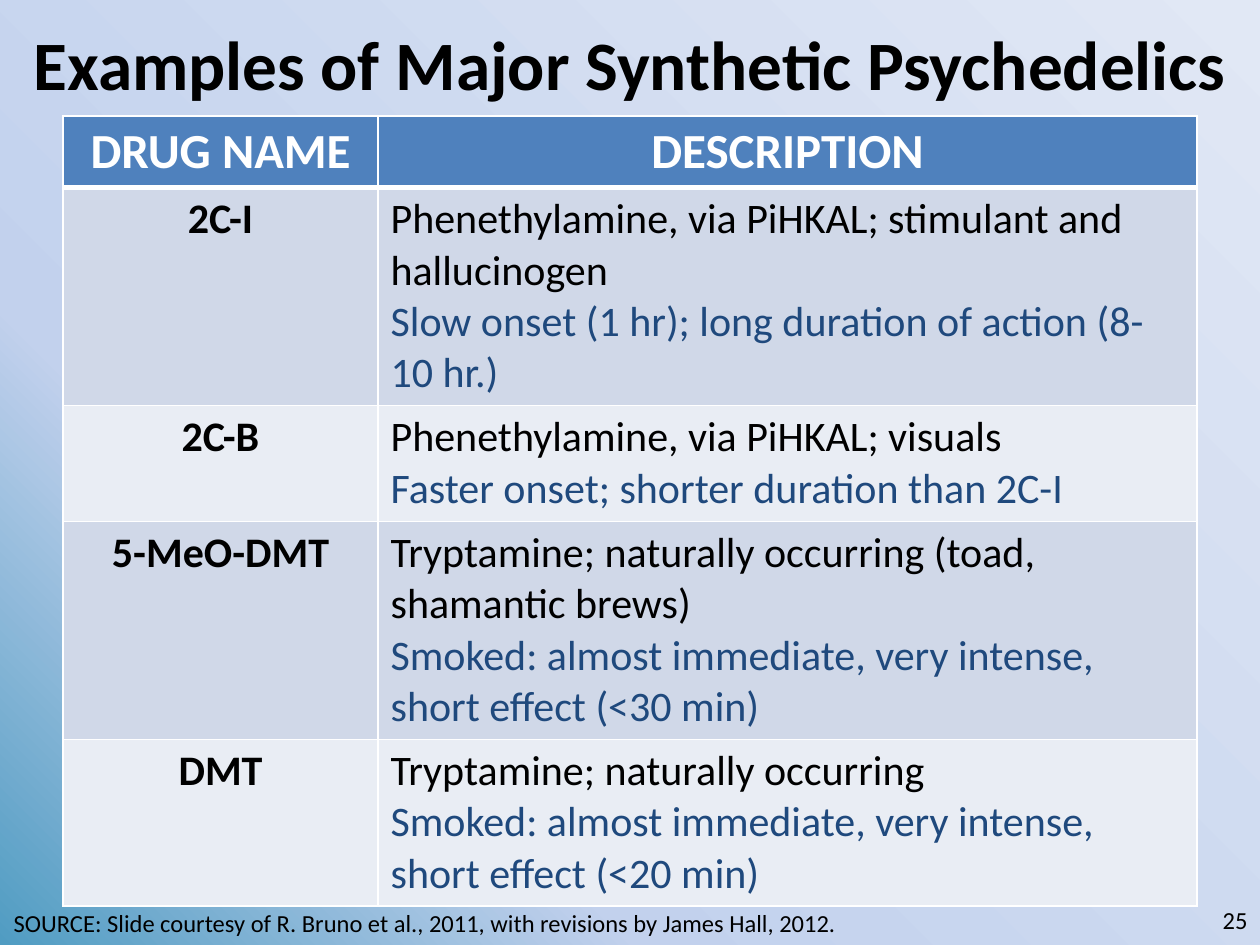
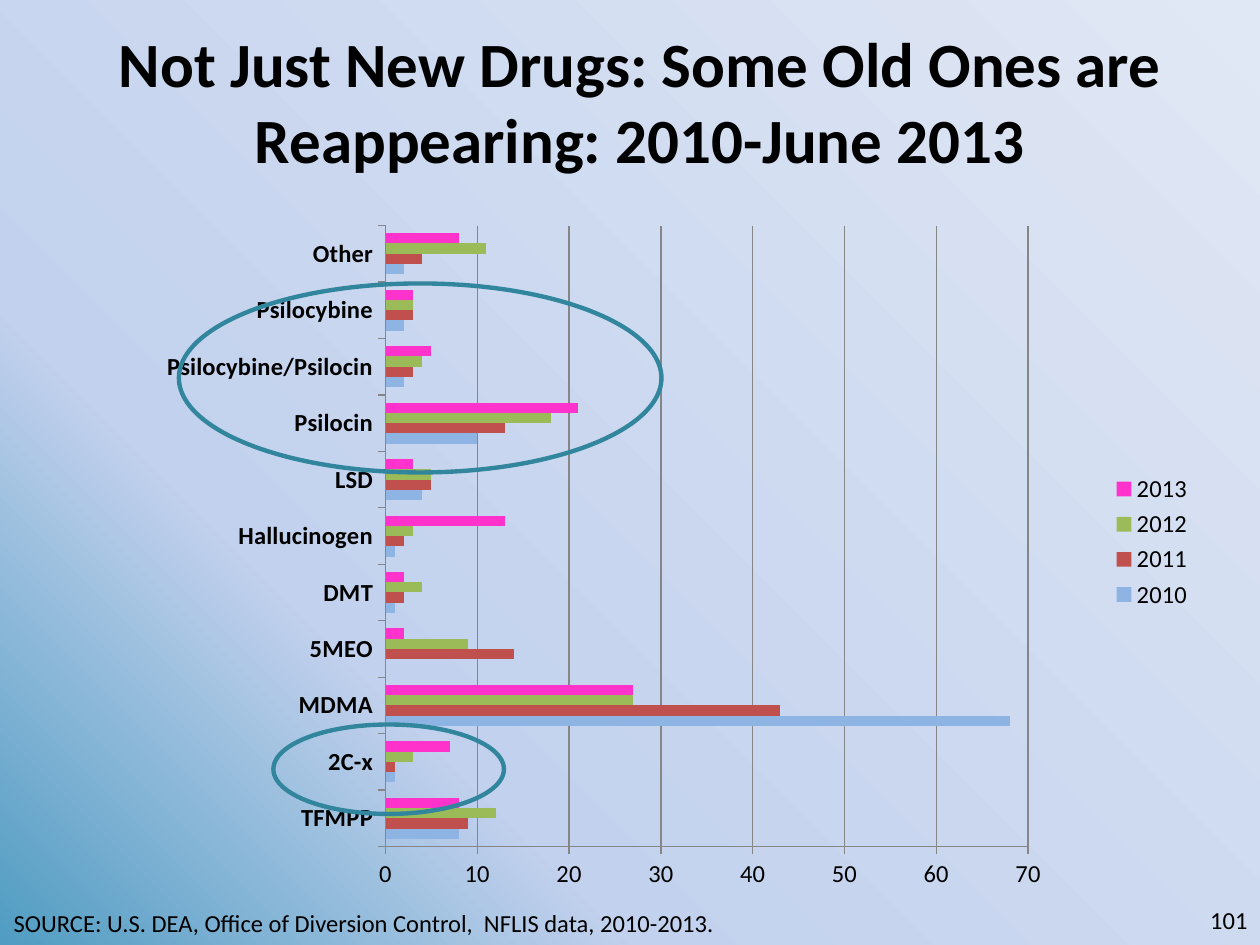
from dataclasses import dataclass

import lxml.etree
import pptx
import pptx.chart.data
import pptx.dml.color
import pptx.enum.chart
import pptx.enum.shapes
import pptx.enum.text
import pptx.oxml.ns
import pptx.util

Inches = pptx.util.Inches
Pt = pptx.util.Pt
qn = pptx.oxml.ns.qn
Align = pptx.enum.text.PP_ALIGN
Anchor = pptx.enum.text.MSO_ANCHOR

FONT = "Calibri"
COLORS = {
    "black": "000000",
    "white": "FFFFFF",
    "navy": "1F497D",
    "head": "4F81BD",
    "odd": "D0D8E8",
    "even": "E9EDF4",
    "ring": "31859C",
    "grid": "868686",
    "2010": "8EB4E3",
    "2011": "C0504D",
    "2012": "9BBB59",
    "2013": "FF33CC",
}
STOPS = [(0, "509CC2"), (29, "C2D1ED"), (100, "E1E8F5")]


@dataclass
class Box:
    left: float
    top: float
    width: float
    height: float

    def spread(self) -> tuple:
        return tuple(Inches(n) for n in (self.left, self.top, self.width, self.height))


@dataclass
class Drug:
    name: str
    kind: str
    effect: str
    height: float


@dataclass
class Count:
    year: str
    values: tuple


SOURCE = Box(0.01, 7.16, 7.5, 0.34)
NUMBER = Box(7.67, 7.1, 2.33, 0.4)
CHART = Box(0.93, 1.47, 8.64, 5.66)
PLOT = Box(2.13, 0.32, 5.1, 4.93)
RINGS = [Box(1.42, 2.25, 3.83, 1.5), Box(2.17, 5.75, 1.83, 0.71)]
DRUGS = [
    Drug("2C-I", "Phenethylamine, via PiHKAL; stimulant and hallucinogen",
         "Slow onset (1 hr); long duration of action (8-10 hr.)", 1.73),
    Drug("2C-B", "Phenethylamine, via PiHKAL; visuals",
         "Faster onset; shorter duration than 2C-I", 0.92),
    Drug("5-MeO-DMT", "Tryptamine; naturally occurring (toad, shamantic brews)",
         "Smoked: almost immediate, very intense, short effect (<30 min)", 1.73),
    Drug("DMT", "Tryptamine; naturally occurring",
         "Smoked: almost immediate, very intense, short effect (<20 min)", 1.32),
]
NAMES = ["TFMPP", "2C-x", "MDMA", "5MEO", "DMT", "Hallucinogen", "LSD", "Psilocin",
         "Psilocybine/Psilocin", "Psilocybine", "Other"]
COUNTS = [
    Count("2010", (8, 1, 68, 0, 1, 1, 4, 10, 2, 2, 2)),
    Count("2011", (9, 1, 43, 14, 2, 2, 5, 13, 3, 3, 4)),
    Count("2012", (12, 3, 27, 9, 4, 3, 5, 18, 4, 3, 11)),
    Count("2013", (8, 7, 27, 2, 2, 13, 3, 21, 5, 3, 8)),
]


def color(name: str):
    return pptx.dml.color.RGBColor.from_string(COLORS[name])


def style(font, size: float, bold: bool = False, tint: str = "black") -> None:
    font.name = FONT
    font.size = Pt(size)
    font.bold = bold
    font.color.rgb = color(tint)


def write(frame, text: str, size: float = 14, bold: bool = False, tint: str = "black",
          align=Align.LEFT, more: bool = False) -> None:
    line = frame.add_paragraph() if more else frame.paragraphs[0]
    line.alignment = align
    run = line.add_run()
    run.text = text
    style(run.font, size, bold, tint)


def add_text(slide, box: Box, text: str, anchor=Anchor.MIDDLE, **form) -> None:
    frame = slide.shapes.add_textbox(*box.spread()).text_frame
    frame.word_wrap = True
    frame.vertical_anchor = anchor
    write(frame, text, **form)


def add_child(parent, tag: str, **attrs):
    return lxml.etree.SubElement(parent, qn(tag), attrs)


def paint_back(master) -> None:
    master.background.fill.gradient()
    grad = master.element.find(".//" + qn("a:gradFill"))
    for child in list(grad):
        grad.remove(child)
    stops = add_child(grad, "a:gsLst")
    for place, tone in STOPS:
        stop = add_child(stops, "a:gs", pos=str(place * 1000))
        add_child(stop, "a:srgbClr", val=tone)
    route = add_child(grad, "a:path", path="circle")
    add_child(route, "a:fillToRect", t="100000", r="100000")


def add_slide(deck, title: str, box: Box, size: float, source: str, number: int):
    slide = deck.slides.add_slide(deck.slide_layouts[6])
    add_text(slide, box, title, size=size, bold=True, align=Align.CENTER)
    add_text(slide, SOURCE, source, anchor=Anchor.TOP)
    add_text(slide, NUMBER, str(number), align=Align.RIGHT)
    return slide


def fill_cell(cell, tint: str, top: float = 1, base: float = 1) -> None:
    props = cell._tc.get_or_add_tcPr()
    for side, width in (("L", 1), ("R", 1), ("T", top), ("B", base)):
        edge = add_child(props, "a:ln" + side, w=str(Pt(width)))
        add_child(add_child(edge, "a:solidFill"), "a:srgbClr", val=COLORS["white"])
    cell.fill.solid()
    cell.fill.fore_color.rgb = color(tint)


def add_drugs(slide) -> None:
    heights = [0.57] + [drug.height for drug in DRUGS]
    box = Box(0.5, 0.92, 9, sum(heights))
    table = slide.shapes.add_table(len(heights), 2, *box.spread()).table
    for column, width in zip(table.columns, (2.5, 6.5)):
        column.width = Inches(width)
    for row, height in zip(table.rows, heights):
        row.height = Inches(height)
    for spot, label in enumerate(("DRUG NAME", "DESCRIPTION")):
        cell = table.cell(0, spot)
        fill_cell(cell, "head", base=3)
        write(cell.text_frame, label, size=28, bold=True, tint="white", align=Align.CENTER)
    for place, drug in enumerate(DRUGS, 1):
        name, about = table.cell(place, 0), table.cell(place, 1)
        for cell in (name, about):
            fill_cell(cell, "odd" if place % 2 else "even", top=3 if place == 1 else 1)
        write(name.text_frame, drug.name, size=24, bold=True, align=Align.CENTER)
        write(about.text_frame, drug.kind, size=24)
        write(about.text_frame, drug.effect, size=24, tint="navy", more=True)


def place_plot(chart) -> None:
    area = chart._chartSpace.find(".//" + qn("c:plotArea"))
    for old in area.findall(qn("c:layout")):
        area.remove(old)
    layout = lxml.etree.Element(qn("c:layout"))
    area.insert(0, layout)
    manual = add_child(layout, "c:manualLayout")
    add_child(manual, "c:layoutTarget", val="inner")
    for mode in ("xMode", "yMode"):
        add_child(manual, "c:" + mode, val="edge")
    shares = {
        "x": PLOT.left / CHART.width,
        "y": PLOT.top / CHART.height,
        "w": PLOT.width / CHART.width,
        "h": PLOT.height / CHART.height,
    }
    for key, share in shares.items():
        add_child(manual, "c:" + key, val=str(share))


def draw_line(line, tint: str, width: float) -> None:
    line.color.rgb = color(tint)
    line.width = Pt(width)


def add_counts(slide) -> None:
    data = pptx.chart.data.CategoryChartData()
    data.categories = NAMES
    for count in COUNTS:
        data.add_series(count.year, count.values)
    kind = pptx.enum.chart.XL_CHART_TYPE.BAR_CLUSTERED
    chart = slide.shapes.add_chart(kind, *CHART.spread(), data).chart
    style(chart.font, 18)
    chart.has_title = False
    chart.has_legend = True
    chart.legend.position = pptx.enum.chart.XL_LEGEND_POSITION.RIGHT
    chart.legend.include_in_layout = False
    style(chart.legend.font, 14)
    plot = chart.plots[0]
    plot.gap_width = 150
    plot.vary_by_categories = False
    for series in plot.series:
        series.format.fill.solid()
        series.format.fill.fore_color.rgb = color(series.name)
    for axis, bold in ((chart.category_axis, True), (chart.value_axis, False)):
        style(axis.tick_labels.font, 14, bold)
        axis.major_tick_mark = pptx.enum.chart.XL_TICK_MARK.OUTSIDE
        axis.minor_tick_mark = pptx.enum.chart.XL_TICK_MARK.NONE
        draw_line(axis.format.line, "grid", 0.75)
    scale = chart.value_axis
    scale.minimum_scale, scale.maximum_scale, scale.major_unit = 0, 70, 10
    scale.has_major_gridlines = True
    draw_line(scale.major_gridlines.format.line, "grid", 0.75)
    place_plot(chart)


def add_ring(slide, box: Box) -> None:
    ring = slide.shapes.add_shape(pptx.enum.shapes.MSO_SHAPE.OVAL, *box.spread())
    ring.shadow.inherit = False
    ring.fill.background()
    draw_line(ring.line, "ring", 2.5)


def main() -> None:
    deck = pptx.Presentation()
    deck.slide_width, deck.slide_height = Inches(10), Inches(7.5)
    paint_back(deck.slide_master)
    drugs = add_slide(
        deck, "Examples of Major Synthetic Psychedelics", Box(0, 0, 10, 1), 39.6,
        "SOURCE: Slide courtesy of R. Bruno et al., 2011, with revisions by James Hall, 2012.",
        25)
    add_drugs(drugs)
    counts = add_slide(
        deck, "Not Just New Drugs: Some Old Ones are Reappearing: 2010-June 2013",
        Box(0.83, 0.17, 8.5, 1.25), 36,
        "SOURCE: U.S. DEA, Office of Diversion Control,  NFLIS data, 2010-2013.", 101)
    add_counts(counts)
    for box in RINGS:
        add_ring(counts, box)
    deck.save("out.pptx")


if __name__ == "__main__":
    main()
